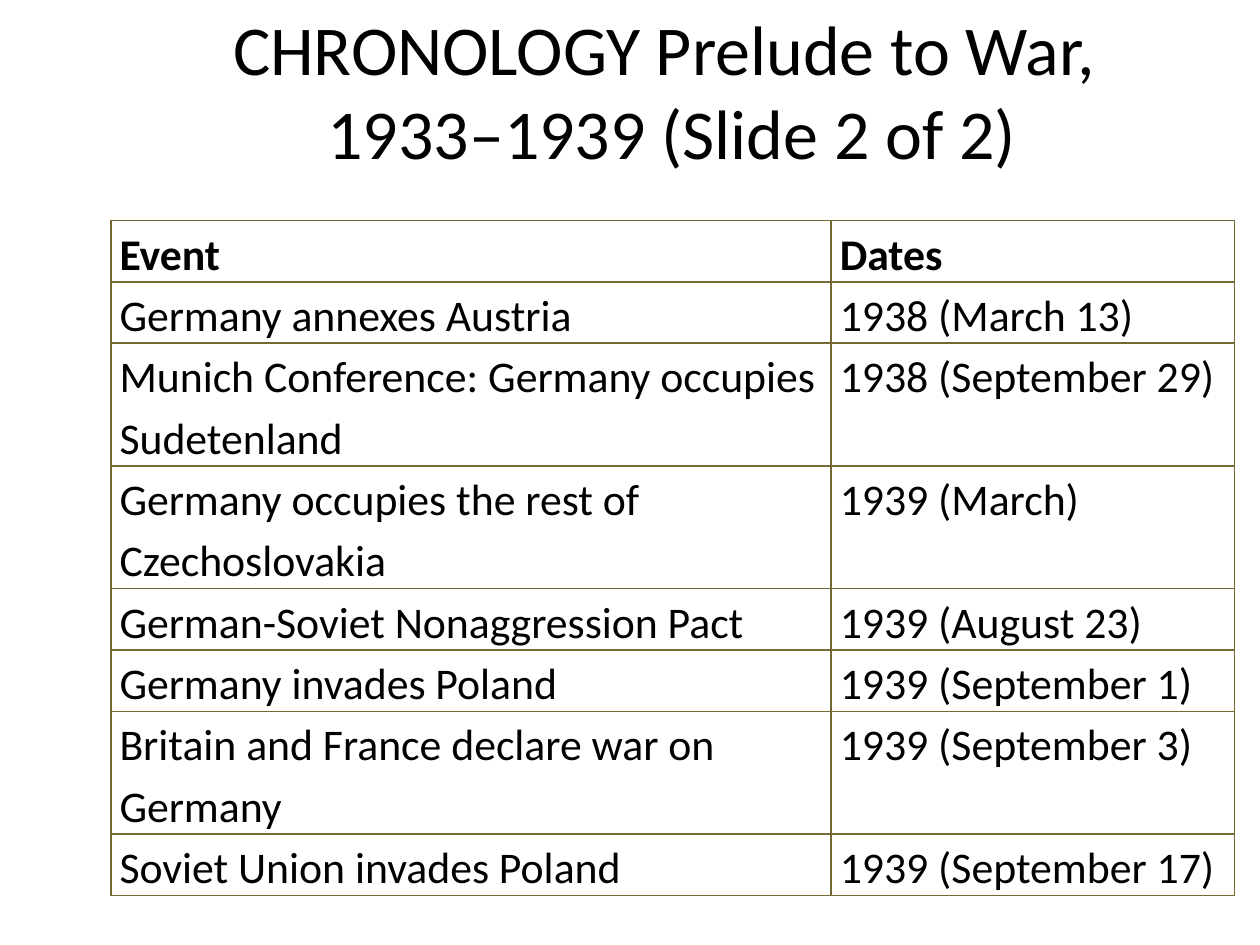
from dataclasses import dataclass

from lxml import etree
from pptx import Presentation
from pptx.dml.color import RGBColor
from pptx.enum.text import MSO_ANCHOR, MSO_AUTO_SIZE, PP_ALIGN
from pptx.oxml.ns import qn
from pptx.util import Pt


@dataclass(frozen=True)
class Theme:
    font: str = "Calibri"
    ink: str = "000000"
    rule: str = "746833"
    title_size: int = 40
    table_size: int = 25


theme = Theme()


def style_paragraph(paragraph, size, bold=False):
    paragraph.font.name = theme.font
    paragraph.font.size = Pt(size)
    paragraph.font.bold = bold
    paragraph.font.color.rgb = RGBColor.from_string(theme.ink)


def add_borders(cell):
    """Draw the four edges; they must precede the fill in the cell properties."""
    properties = cell._tc.get_or_add_tcPr()
    for position, edge in enumerate(("a:lnL", "a:lnR", "a:lnT", "a:lnB")):
        line = etree.Element(qn(edge), w=str(Pt(1)))
        fill = etree.SubElement(line, qn("a:solidFill"))
        etree.SubElement(fill, qn("a:srgbClr"), val=theme.rule)
        properties.insert(position, line)


events = [
    ("Event", "Dates"),
    ("Germany annexes Austria", "1938 (March 13)"),
    ("Munich Conference: Germany occupies Sudetenland", "1938 (September 29)"),
    ("Germany occupies the rest of Czechoslovakia", "1939 (March)"),
    ("German-Soviet Nonaggression Pact", "1939 (August 23)"),
    ("Germany invades Poland", "1939 (September 1)"),
    ("Britain and France declare war on Germany", "1939 (September 3)"),
    ("Soviet Union invades Poland", "1939 (September 17)"),
]
column_widths = (411.6, 230.4)
row_height = 32.4

presentation = Presentation()
presentation.slide_width, presentation.slide_height = Pt(720), Pt(540)
slide = presentation.slides.add_slide(presentation.slide_layouts[5])

# Title
title = slide.shapes.title
title.left, title.top, title.width, title.height = Pt(48), Pt(36), Pt(672), Pt(30)
title.text_frame.text = "CHRONOLOGY Prelude to War, \v1933–1939 (Slide 2 of 2)"
title.text_frame.auto_size = MSO_AUTO_SIZE.NONE
title.text_frame.vertical_anchor = MSO_ANCHOR.MIDDLE
heading = title.text_frame.paragraphs[0]
heading.alignment = PP_ALIGN.CENTER
style_paragraph(heading, theme.title_size)

# Chronology table: rows grow where the event wraps
chronology = slide.shapes.add_table(
    len(events), len(column_widths), Pt(63.3), Pt(126),
    Pt(sum(column_widths)), Pt(row_height * len(events)),
).table
chronology.horz_banding = False
for column, width in zip(chronology.columns, column_widths):
    column.width = Pt(width)

for row_index, entry in enumerate(events):
    chronology.rows[row_index].height = Pt(row_height)
    for column_index, wording in enumerate(entry):
        cell = chronology.cell(row_index, column_index)
        cell.text = wording
        cell.margin_left = cell.margin_right = Pt(5)
        cell.margin_top = cell.margin_bottom = Pt(0)
        cell.fill.background()
        add_borders(cell)
        paragraph = cell.text_frame.paragraphs[0]
        paragraph.line_spacing = 1.15
        style_paragraph(paragraph, theme.table_size, bold=row_index == 0)

presentation.save("out.pptx")
